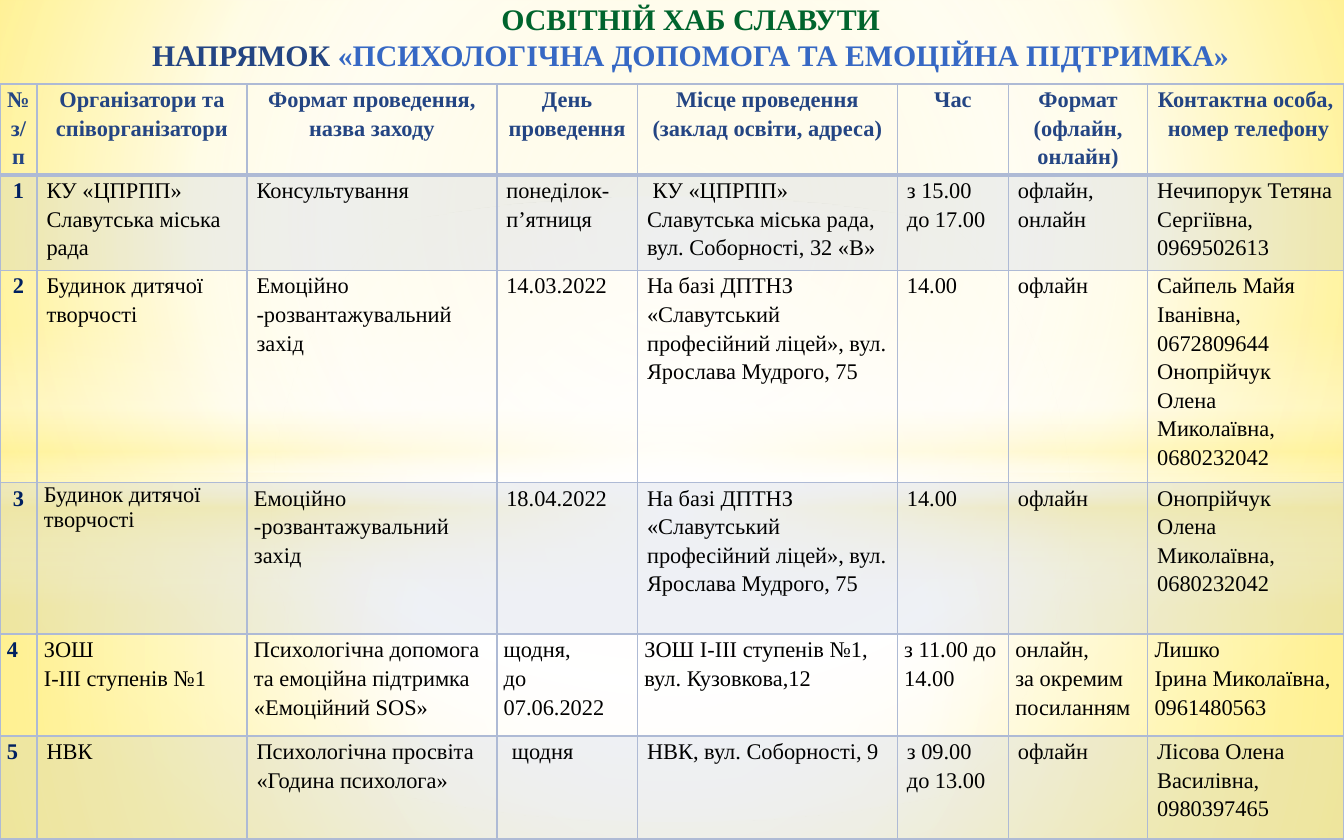
from lxml import etree
from pptx import Presentation
from pptx import util as u
from pptx.dml.color import RGBColor
from pptx.enum import shapes, text
from pptx.oxml.ns import nsdecls, qn

FONT = "Times New Roman"
BORDER = "AEBAD5"
COLUMN_WIDTHS = [0.7, 3.97, 4.72, 2.66, 4.91, 2.1, 2.63, 3.71]
ROW_HEIGHTS = [1.72, 1.8, 4.01, 2.87, 1.92, 1.95]
NARROW, WIDE = 0.13, 0.18
LYCEUM = "На базі ДПТНЗ «Славутський професійний ліцей», вул. Ярослава Мудрого, 75"
RELIEF = "Емоційно -розвантажувальний захід"
SCHEDULE = [
    ["№\nз/п", "Організатори та співорганізатори", "Формат проведення, назва заходу",
     "День проведення", "Місце проведення\n(заклад освіти, адреса)", "Час",
     "Формат\n(офлайн, онлайн)", "Контактна особа,\n номер телефону"],
    ["1", "КУ «ЦПРПП» Славутська міська рада", "Консультування", "понеділок-п’ятниця",
     " КУ «ЦПРПП» Славутська міська рада, вул. Соборності, 32 «В»",
     "з 15.00 до 17.00", "офлайн, онлайн", "Нечипорук Тетяна Сергіївна, 0969502613"],
    ["2", "Будинок дитячої творчості", RELIEF, "14.03.2022", LYCEUM, "14.00", "офлайн",
     "Сайпель Майя Іванівна,\n0672809644 Онопрійчук Олена Миколаївна,\n0680232042"],
    ["3", "Будинок дитячої творчості", RELIEF, "18.04.2022", LYCEUM, "14.00", "офлайн",
     "Онопрійчук Олена Миколаївна,\n0680232042"],
    ["4", "ЗОШ\nІ-ІІІ ступенів №1",
     "Психологічна допомога та емоційна підтримка «Емоційний SOS»",
     "щодня,\nдо 07.06.2022", "ЗОШ І-ІІІ ступенів №1, вул. Кузовкова,12",
     "з 11.00 до 14.00", "онлайн,\nза окремим посиланням",
     "Лишко\nІрина Миколаївна,\n0961480563"],
    ["5", "НВК", "Психологічна просвіта «Година психолога»", " щодня",
     "НВК, вул. Соборності, 9", "з 09.00 до 13.00", "офлайн",
     "Лісова Олена Василівна, 0980397465"],
]


def color(value):
    """Turn a hex string into a colour."""
    return RGBColor.from_string(value)


def gradient(stops, focus=None):
    """Return a gradient fill: circular around focus, or top to bottom without it."""
    marks = "".join(
        f'<a:gs pos="{pos * 1000}"><a:srgbClr val="{tone}">'
        f'<a:alpha val="{alpha * 1000}"/></a:srgbClr></a:gs>'
        for pos, tone, alpha in stops)
    if focus:
        sides = " ".join(f'{side}="{value * 1000}"' for side, value in zip("ltrb", focus))
        way = f'<a:path path="circle"><a:fillToRect {sides}/></a:path>'
    else:
        way = '<a:lin ang="5400000" scaled="0"/>'
    return etree.fromstring(
        f'<a:gradFill {nsdecls("a")} rotWithShape="1"><a:gsLst>{marks}</a:gsLst>{way}</a:gradFill>')


def add_glow(slide, kind, box, fill):
    """Add one borderless shape with a gradient fill."""
    glow = slide.shapes.add_shape(kind, *map(u.Cm, box))
    glow.shadow.inherit = False
    glow.line.fill.background()
    glow._element.spPr.find(qn("a:prstGeom")).addnext(fill)


def add_backdrop(slide, box):
    """Paint the background and its four layers of light."""
    slide.background.fill.solid()
    solid = slide._element.cSld.find(".//" + qn("a:solidFill"))
    solid.getparent().replace(solid, gradient(
        [(0, "FFF18D", 100), (60, "FFFFFF", 100), (100, "FFE94E", 100)], (20, 10, 20, 60)))
    left, top, width, height = box
    horizon = 8.94
    rect, oval = shapes.MSO_SHAPE.RECTANGLE, shapes.MSO_SHAPE.OVAL
    middle = (50, 50, 50, 50)
    add_glow(slide, rect, (left, top + horizon, width, height - horizon), gradient(
        [(0, "FFFFFF", 91), (37, "FFFFFF", 76), (100, "FFF39D", 79)], middle))
    add_glow(slide, rect, (left, top, width, horizon), gradient(
        [(0, "FFFFFF", 89), (48, "FFFFFF", 62), (100, "FFF39D", 79)], middle))
    add_glow(slide, rect, (left, top + 6.15, width, 5.28), gradient(
        [(0, "FFFFFF", 0), (29, "FFFFFF", 30), (45, "FFF39D", 40),
         (55, "FFFFFF", 26), (65, "FFF39D", 60), (100, "FFFFFF", 0)]))
    add_glow(slide, oval, (left, top + 3.71, width, 11.81), gradient(
        [(0, "FFFFFF", 100), (54, "FFFFFF", 0)], middle))


def add_run(paragraph, words, size, tone, bold):
    """Add one formatted run."""
    run = paragraph.add_run()
    run.text = words
    run.font.name, run.font.size, run.font.bold = FONT, u.Pt(size), bold
    run.font.color.rgb = color(tone)


def add_heading(slide, box):
    """Place the two-line title in front of the backdrop."""
    heading = slide.shapes.title
    slide.shapes._spTree.append(heading._element)
    heading.left, heading.top, heading.width, heading.height = map(u.Cm, box)
    frame = heading.text_frame
    frame.word_wrap = True
    frame.vertical_anchor = text.MSO_ANCHOR.MIDDLE
    frame.margin_top = frame.margin_bottom = 0
    lines = [
        [("ОСВІТНІЙ ХАБ СЛАВУТИ", "00642D")],
        [("НАПРЯМОК ", "244583"),
         ("«ПСИХОЛОГІЧНА ДОПОМОГА ТА ЕМОЦІЙНА ПІДТРИМКА»", "3668C4")],
    ]
    for index, line in enumerate(lines):
        paragraph = frame.paragraphs[0] if index == 0 else frame.add_paragraph()
        paragraph.alignment = text.PP_ALIGN.CENTER
        for words, tone in line:
            add_run(paragraph, words, 16, tone, True)


def style_cell(cell, row):
    """Draw the borders of a cell and tint every second row."""
    properties = cell._tc.get_or_add_tcPr()
    weights = {"L": 1, "R": 1, "T": 2 if row == 1 else 1, "B": 2 if row == 0 else 1}
    for side, weight in weights.items():
        properties.append(etree.fromstring(
            f'<a:ln{side} {nsdecls("a")} w="{weight * 12700}"><a:solidFill>'
            f'<a:srgbClr val="{BORDER}"/></a:solidFill></a:ln{side}>'))
    if row % 2:
        cell.fill.solid()
        cell.fill.fore_color.rgb = color(BORDER)
        tint = properties.find(qn("a:solidFill"))[0]
        etree.SubElement(tint, qn("a:alpha")).set("val", "20000")
    else:
        cell.fill.background()


def fill_cell(cell, words, row, column):
    """Write the paragraphs of a cell."""
    narrow = row in (0, 4) or column == 0 or (row == 3 and column < 3)
    cell.margin_left = cell.margin_right = u.Cm(NARROW if narrow else WIDE)
    cell.margin_top = cell.margin_bottom = 0
    centred = row == 0 or (column == 0 and row < 4)
    tone = "244583" if row == 0 else "002060" if column == 0 else "000000"
    frame = cell.text_frame
    for index, line in enumerate(words.split("\n")):
        paragraph = frame.paragraphs[0] if index == 0 else frame.add_paragraph()
        paragraph.alignment = text.PP_ALIGN.CENTER if centred else text.PP_ALIGN.LEFT
        paragraph.line_spacing = 1.0 if (row, column) == (3, 1) else 1.15
        add_run(paragraph, line, 12, tone, row == 0 or column == 0)


def add_schedule(slide, box):
    """Place the table of events."""
    schedule = slide.shapes.add_table(
        len(ROW_HEIGHTS), len(COLUMN_WIDTHS), *map(u.Cm, box)).table
    schedule.horz_banding = schedule.first_row = False
    for column, width in zip(schedule.columns, COLUMN_WIDTHS):
        column.width = u.Cm(width)
    for row, height in zip(schedule.rows, ROW_HEIGHTS):
        row.height = u.Cm(height)
    for row, entries in enumerate(SCHEDULE):
        for column, words in enumerate(entries):
            cell = schedule.cell(row, column)
            style_cell(cell, row)
            fill_cell(cell, words, row, column)


def main():
    """Build the slide and save it."""
    deck = Presentation()
    width, height = 25.4, 15.88
    deck.slide_width, deck.slide_height = u.Cm(width), u.Cm(height)
    slide = deck.slides.add_slide(deck.slide_layouts[5])
    add_backdrop(slide, (0, 0, width, height))
    add_schedule(slide, (0, 1.59, sum(COLUMN_WIDTHS), sum(ROW_HEIGHTS)))
    add_heading(slide, (0.71, 0, width - 0.71, 1.38))
    deck.save("out.pptx")


if __name__ == "__main__":
    main()
